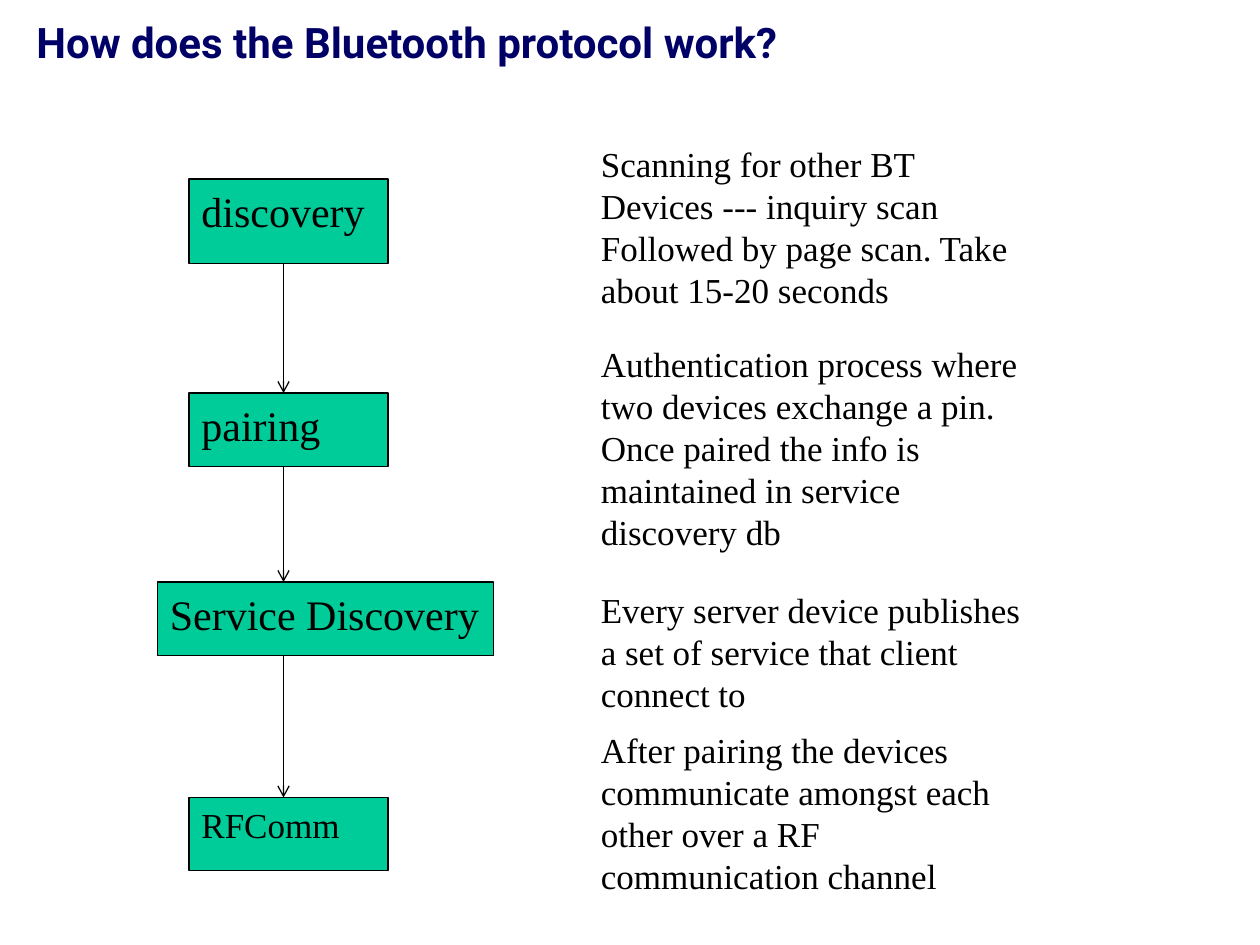
import pptx
import pptx.dml.color
import pptx.enum.shapes
import pptx.enum.text
import pptx.oxml
import pptx.oxml.ns
import pptx.util

Inches = pptx.util.Inches
SERIF = "Times New Roman"
LEFT, MID, NOTE = 1.5, 2.25, 4.67

STEPS = [
    ("discovery", LEFT, 1.42, 1.58, 0.67, 24),
    ("pairing", LEFT, 3.12, 1.58, 0.58, 24),
    ("Service Discovery", 1.25, 4.62, 2.67, 0.58, 24),
    ("RFComm", LEFT, 6.33, 1.58, 0.58, 20),
]

NOTES = [
    (1.08, 1.45, "Scanning for other BT\nDevices --- inquiry scan\n"
     "Followed by page scan. Take about 15-20 seconds"),
    (2.67, 1.78, "Authentication process where two devices exchange a pin. "
     "Once paired the info is maintained in service discovery db"),
    (4.62, 1.11, "Every server device publishes a set of service that client connect to"),
    (5.73, 1.45, "After pairing the devices communicate amongst each other "
     "over a RF communication channel"),
]


def color(code):
    """Turn a hex string into a colour."""
    return pptx.dml.color.RGBColor.from_string(code)


def write(shape, text, size=20, font=SERIF, ink="000000", bold=False):
    """Put left-aligned text at the top of a shape, one paragraph a line."""
    frame = shape.text_frame
    frame.word_wrap = True
    frame.vertical_anchor = pptx.enum.text.MSO_ANCHOR.TOP
    frame.text = text
    for para in frame.paragraphs:
        para.alignment = pptx.enum.text.PP_ALIGN.LEFT
        for run in para.runs:
            run.font.size = pptx.util.Pt(size)
            run.font.name = font
            run.font.bold = bold
            run.font.color.rgb = color(ink)


def stroke(line):
    """Give a line the thin black style."""
    line.color.rgb = color("000000")
    line.width = pptx.util.Pt(0.75)


def label(slide, text, left, top, width, height, **style):
    """Add a text box."""
    box = slide.shapes.add_textbox(
        Inches(left), Inches(top), Inches(width), Inches(height))
    write(box, text, **style)


def step(slide, text, left, top, width, height, size):
    """Add one green step box."""
    box = slide.shapes.add_shape(
        pptx.enum.shapes.MSO_SHAPE.RECTANGLE,
        Inches(left), Inches(top), Inches(width), Inches(height))
    box.shadow.inherit = False
    box.fill.solid()
    box.fill.fore_color.rgb = color("00CC99")
    stroke(box.line)
    write(box, text, size=size)


def arrow(slide, top, end):
    """Add a downward arrow between two heights."""
    link = slide.shapes.add_connector(
        pptx.enum.shapes.MSO_CONNECTOR.STRAIGHT,
        Inches(MID), Inches(top), Inches(MID), Inches(end))
    stroke(link.line)
    head = pptx.oxml.parse_xml(
        f'<a:tailEnd {pptx.oxml.ns.nsdecls("a")} type="arrow"/>')
    link.line._get_or_add_ln().append(head)
    link._element.spPr.append(
        pptx.oxml.parse_xml(f'<a:effectLst {pptx.oxml.ns.nsdecls("a")}/>'))


def main():
    """Build and save the slide."""
    deck = pptx.Presentation()
    deck.slide_width, deck.slide_height = Inches(10), Inches(7.5)
    slide = deck.slides.add_slide(deck.slide_layouts[6])
    label(slide, "How does the Bluetooth protocol work?", 0.19, 0.08, 9.71, 1,
          size=24, font="Roboto", ink="000066", bold=True)
    for item in STEPS:
        step(slide, *item)
    for top, height, text in NOTES:
        label(slide, text, NOTE, top, 3.58, height)
    for first, second in zip(STEPS, STEPS[1:]):
        arrow(slide, first[2] + first[4], second[2])
    deck.save("out.pptx")


if __name__ == "__main__":
    main()
